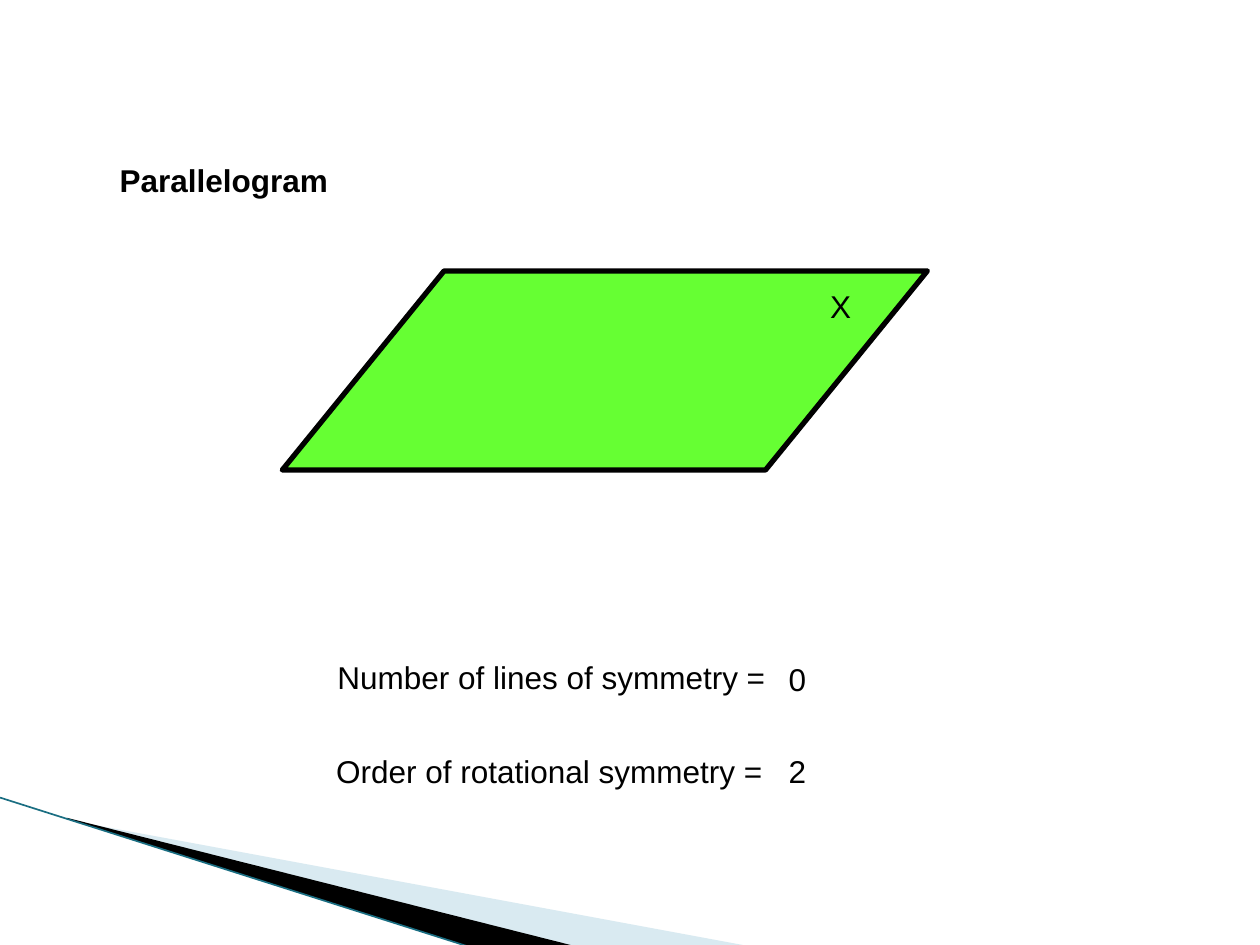
from dataclasses import dataclass

from lxml.etree import SubElement
from pptx import Presentation
from pptx.dml.color import RGBColor
from pptx.enum.shapes import MSO_CONNECTOR, MSO_SHAPE
from pptx.enum.text import MSO_ANCHOR, MSO_AUTO_SIZE, PP_ALIGN
from pptx.oxml.ns import qn
from pptx.util import Inches, Pt


@dataclass(frozen=True)
class Theme:
    font: str = "Arial"
    size: int = 18
    ink: RGBColor = RGBColor(0, 0, 0)
    figure: RGBColor = RGBColor(0x66, 0xFF, 0x33)
    pale: RGBColor = RGBColor(0xA0, 0xCB, 0xDC)
    edge: RGBColor = RGBColor(0x1A, 0x6E, 0x82)
    outline: float = 3
    hairline: float = 0.95


@dataclass(frozen=True)
class Box:
    left: float
    top: float
    width: float
    height: float = 0.4

    def lengths(self):
        return [Inches(v) for v in (self.left, self.top, self.width, self.height)]


THEME = Theme()


def set_all(target, values):
    for name, value in values.items():
        setattr(target, name, value)


def write(shape, text, bold=False):
    frame = shape.text_frame
    set_all(frame, {"text": text, "word_wrap": True,
                    "auto_size": MSO_AUTO_SIZE.NONE,
                    "vertical_anchor": MSO_ANCHOR.TOP})
    para = frame.paragraphs[0]
    para.alignment = PP_ALIGN.LEFT
    span = para.runs[0]
    set_all(span.font, {"name": THEME.font, "size": Pt(THEME.size), "bold": bold})
    span.font.color.rgb = THEME.ink


def add_label(shapes, box, text):
    write(shapes.add_textbox(*box.lengths()), text)


def add_wedge(page, box, points, color, opacity=None):
    """Draw a filled outline whose points are offsets from the box corner."""
    corners = [(Inches(box.left + x), Inches(box.top + y)) for x, y in points]
    builder = page.shapes.build_freeform(*corners[0])
    builder.add_line_segments(corners[1:], close=True)
    wedge = builder.convert_to_shape()
    wedge.shadow.inherit = False
    wedge.line.fill.background()
    wedge.fill.solid()
    wedge.fill.fore_color.rgb = color
    if opacity is not None:
        color_node = wedge.fill._xPr.find(qn("a:solidFill"))[0]
        SubElement(color_node, qn("a:alpha"), val=str(opacity * 1000))


def add_corner_decoration(page, box):
    add_wedge(page, box, [(0.55, 0.18), (5.95, 1.18), (4.56, 1.18), (0.55, 0.17)],
              THEME.pale, opacity=40)
    add_wedge(page, box, [(0.53, 0.16), (4.57, 1.18), (3.72, 1.18), (0.54, 0.17)],
              THEME.ink)
    edge = page.shapes.add_connector(
        MSO_CONNECTOR.STRAIGHT, Inches(box.left), Inches(box.top),
        Inches(box.left + 3.71), Inches(box.top + 1.18))
    edge.line.color.rgb = THEME.edge
    edge.line.width = Pt(THEME.hairline)
    SubElement(edge._element.spPr, qn("a:effectLst"))


def add_title(page, box, text):
    title = page.shapes.title
    set_all(title, dict(zip(("left", "top", "width", "height"), box.lengths())))
    write(title, text, bold=True)


def add_figure(page, box):
    group = page.shapes.add_group_shape()
    figure = group.shapes.add_shape(MSO_SHAPE.PARALLELOGRAM, *box.lengths())
    figure.adjustments[0] = 0.813
    figure.shadow.inherit = False
    figure.fill.solid()
    figure.fill.fore_color.rgb = THEME.figure
    figure.line.color.rgb = THEME.ink
    figure.line.width = Pt(THEME.outline)
    add_label(group.shapes, Box(box.left + 4.25, box.top + 0.08, 0.38), "X")


def add_answers(page, box):
    rows = [("Number of lines of symmetry =", "0", 0.01, 0, 0.02),
            ("Order of rotational symmetry =", "2", 0, 0.75, 0.75)]
    for question, answer, indent, question_top, answer_top in rows:
        add_label(page.shapes, Box(box.left + indent, box.top + question_top, 3.64),
                  question)
        add_label(page.shapes, Box(box.left + 3.59, box.top + answer_top, 0.85),
                  answer)


def main():
    deck = Presentation()
    deck.slide_width, deck.slide_height = Inches(10), Inches(7.5)
    page = deck.slides.add_slide(deck.slide_layouts[5])
    add_corner_decoration(page, Box(0, 6.33, 5.95, 1.18))
    add_title(page, Box(0.85, 1.23, 2.31), "Parallelogram")
    add_figure(page, Box(2.24, 2.15, 5.12, 1.58))
    add_answers(page, Box(2.57, 5.17, 4.44, 1.15))
    deck.save("out.pptx")


if __name__ == "__main__":
    main()
